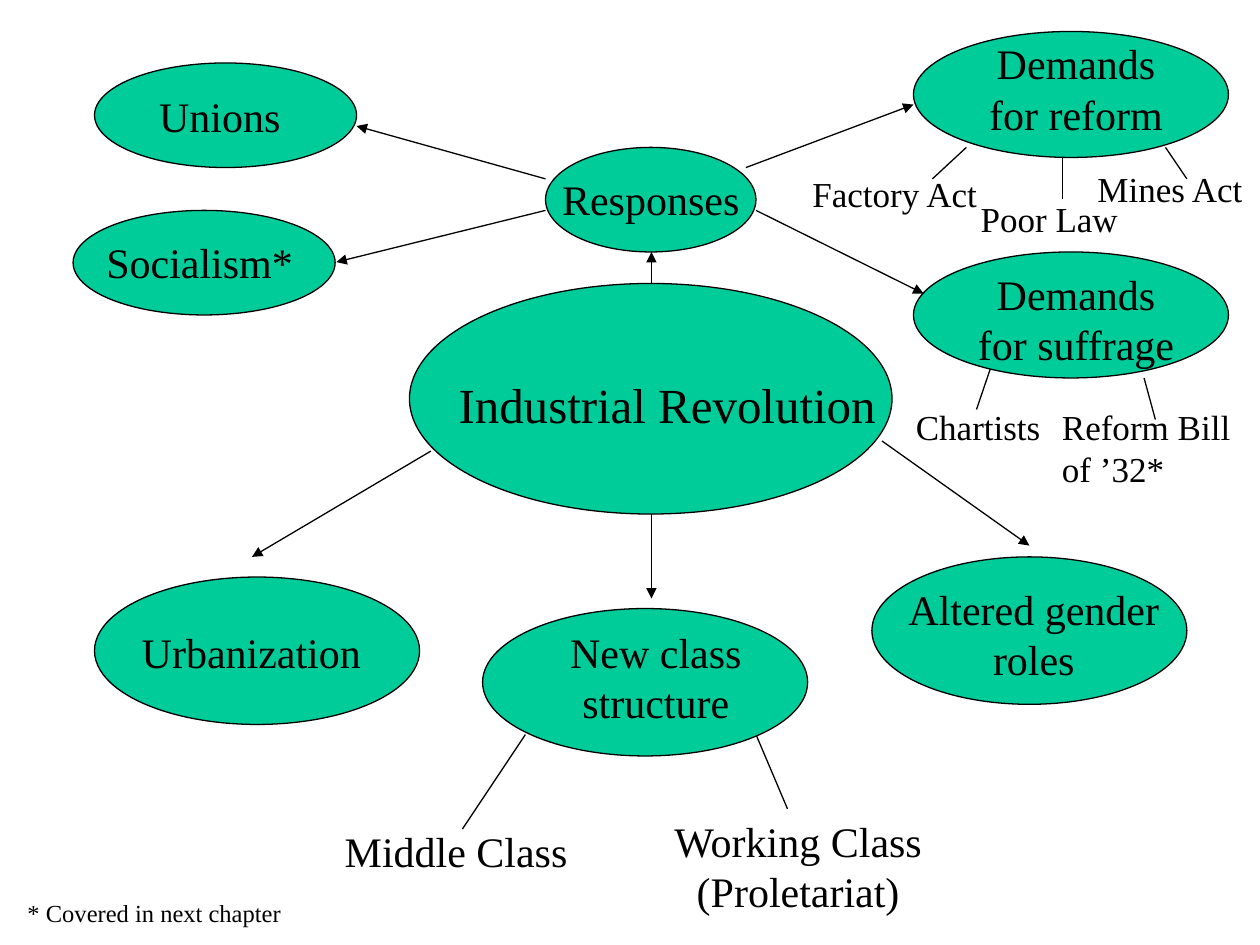
from lxml import etree
from pptx import Presentation
from pptx.dml.color import RGBColor
from pptx.enum.shapes import MSO_CONNECTOR, MSO_SHAPE
from pptx.enum.text import MSO_AUTO_SIZE, PP_ALIGN
from pptx.oxml.ns import qn
from pptx.util import Inches, Pt

GREEN = RGBColor(0x00, 0xCC, 0x99)
BLACK = RGBColor(0x00, 0x00, 0x00)
FONT = "Times New Roman"
ELLIPSE = MSO_SHAPE.OVAL
STRAIGHT = MSO_CONNECTOR.STRAIGHT
FIT_SHAPE = MSO_AUTO_SIZE.SHAPE_TO_FIT_TEXT
LEFT, CENTER, RIGHT = PP_ALIGN.LEFT, PP_ALIGN.CENTER, PP_ALIGN.RIGHT

# Each bubble: left, top, width, height
BUBBLES = [
    (3.25, 2.25, 3.83, 1.83),  # Industrial Revolution
    (4.33, 1.17, 1.67, 0.83),  # Responses
    (0.75, 0.5, 2.08, 0.83),   # Unions
    (0.58, 1.67, 2.08, 0.83),  # Socialism
    (7.25, 0.25, 2.5, 1),      # Demands for reform
    (7.25, 2, 2.5, 1),         # Demands for suffrage
    (0.75, 4.58, 2.58, 1.17),  # Urbanization
    (3.83, 4.83, 2.58, 1.17),  # New class structure
    (6.92, 4.42, 2.5, 1.17),   # Altered gender roles
]

# Each link: start x, start y, end x, end y
ARROWS = [
    (5.17, 2.25, 5.17, 2),     # Revolution to Responses
    (3.42, 3.58, 2, 4.42),     # Revolution to Urbanization
    (5.17, 4.08, 5.17, 4.75),  # Revolution to New class structure
    (7, 3.5, 8.17, 4.33),      # Revolution to Altered gender roles
    (4.33, 1.42, 2.83, 1),     # Responses to Unions
    (4.33, 1.67, 2.67, 2.08),  # Responses to Socialism
    (5.92, 1.33, 7.25, 0.83),  # Responses to Demands for reform
    (6, 1.67, 7.33, 2.33),     # Responses to Demands for suffrage
]
BRANCHES = [
    (4.17, 5.83, 3.67, 6.58),  # Middle Class
    (6, 5.83, 6.25, 6.42),     # Working Class
    (7.67, 1.17, 7.4, 1.42),   # Factory Act
    (9.25, 1.17, 9.42, 1.42),  # Mines Act
    (7.92, 2.75, 7.75, 3.25),  # Chartists
    (9.08, 3, 9.17, 3.33),     # Reform Bill
]
POOR_LAW_BRANCH = (8.43, 1.25, 8.43, 1.58)

# Each label: text, left, top, width, height
TOPICS = [
    ("Responses", 4, 1.33, 2.33, 0.5),
    ("Unions", 0.58, 0.67, 2.33, 0.5),
    ("Socialism*", 0.42, 1.83, 2.33, 0.5),
    ("Demands for reform", 7.58, 0.25, 1.92, 0.9),
    ("Demands for suffrage", 7.58, 2.08, 1.92, 0.9),
    ("Urbanization", 0.83, 4.92, 2.33, 0.5),
    ("New class structure", 4.08, 4.92, 2.25, 0.9),
    ("Altered gender roles", 7.08, 4.58, 2.25, 0.9),
    ("Middle Class", 2.58, 6.5, 2.08, 0.5),
    ("Working Class (Proletariat)", 5, 6.42, 2.67, 0.9),
]
EXAMPLES = [
    ("Factory Act", 6.35, 1.32, 1.83, 0.43, LEFT),
    ("Mines Act", 8.61, 1.28, 1.35, 0.43, RIGHT),
    ("Poor Law", 7.62, 1.52, 1.35, 0.43, RIGHT),
    ("Chartists", 7.17, 3.17, 1.42, 0.43, LEFT),
    ("Reform Bill of ’32*", 8.33, 3.17, 1.67, 0.77, LEFT),
]


class ConceptMap:
    """Draws bubbles, links and labels in one style on a slide."""

    def __init__(self, slide):
        self.shapes = slide.shapes

    def bubble(self, *box):
        oval = self.shapes.add_shape(ELLIPSE, *map(Inches, box))
        oval.shadow.inherit = False
        oval.fill.solid()
        oval.fill.fore_color.rgb = GREEN
        oval.line.color.rgb = BLACK
        oval.line.width = Pt(0.75)

    def link(self, *ends, arrow=False, weight=0.75):
        connector = self.shapes.add_connector(STRAIGHT, *map(Inches, ends))
        connector.line.color.rgb = BLACK
        connector.line.width = Pt(weight)
        if arrow:
            line = connector.line._get_or_add_ln()
            etree.SubElement(line, qn("a:tailEnd"), type="triangle")
        etree.SubElement(connector._element.spPr, qn("a:effectLst"))

    def label(self, text, *box, size=24, align=CENTER):
        frame = self.shapes.add_textbox(*map(Inches, box)).text_frame
        frame.word_wrap = True
        frame.auto_size = FIT_SHAPE
        frame.text = text
        paragraph = frame.paragraphs[0]
        paragraph.alignment = align
        font = paragraph.runs[0].font
        font.name = FONT
        font.size = Pt(size)
        font.color.rgb = BLACK


def main():
    deck = Presentation()
    deck.slide_width, deck.slide_height = Inches(10), Inches(7.5)
    blank_layout = deck.slide_layouts[6]
    concept_map = ConceptMap(deck.slides.add_slide(blank_layout))

    # Links come first so that the bubbles cover ends that reach inside them
    for ends in ARROWS:
        concept_map.link(*ends, arrow=True)
    for ends in BRANCHES:
        concept_map.link(*ends)
    concept_map.link(*POOR_LAW_BRANCH, weight=0.5)
    for box in BUBBLES:
        concept_map.bubble(*box)

    concept_map.label("Industrial Revolution", 3.42, 2.92, 3.75, 0.57, size=28)
    for topic in TOPICS:
        concept_map.label(*topic)
    for *example, align in EXAMPLES:
        concept_map.label(*example, size=20, align=align)
    concept_map.label("* Covered in next chapter", 0.12, 7.08, 3.83, 0.34,
                      size=14, align=LEFT)

    deck.save("out.pptx")


if __name__ == "__main__":
    main()
